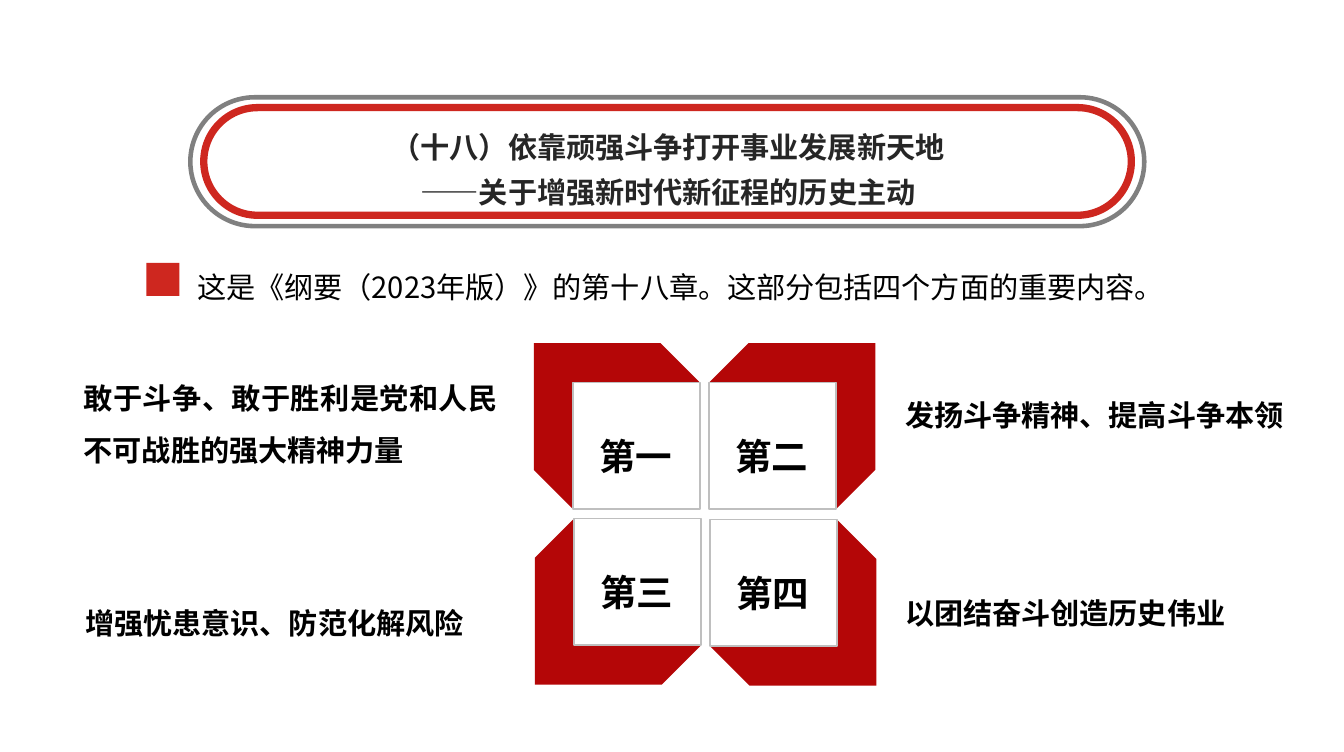
"""Builds the chapter eighteen slide with four numbered points."""
from dataclasses import dataclass

from lxml.etree import SubElement
from pptx import Presentation
from pptx.dml.color import RGBColor as Rgb
from pptx.enum.shapes import MSO_SHAPE as Kind
from pptx.enum.text import MSO_ANCHOR as Anchor, MSO_AUTO_SIZE as Fit, PP_ALIGN as Align
from pptx.oxml.ns import qn
from pptx.util import Cm, Pt

TITLE = ["（十八）依靠顽强斗争打开事业发展新天地", "——关于增强新时代新征程的历史主动"]
INTRO = "这是《纲要（2023年版）》的第十八章。这部分包括四个方面的重要内容。"
POINTS = [
    {"num": "第一", "text": "敢于斗争、敢于胜利是党和人民不可战胜的强大精神力量",
     "at": (1.37, 6.88, 8.51, 2.16), "corner": (10.32, 6.63), "way": (1, 1)},
    {"num": "第二", "text": "发扬斗争精神、提高斗争本领",
     "at": (17.25, 7.21, 8.51, 1.12), "corner": (16.92, 6.63), "way": (-1, 1)},
    {"num": "第三", "text": "增强忧患意识、防范化解风险",
     "at": (1.4, 11.23, 8.51, 1.12), "corner": (10.34, 13.23), "way": (1, -1)},
    {"num": "第四", "text": "以团结奋斗创造历史伟业",
     "at": (17.25, 11.05, 8.51, 1.12), "corner": (16.94, 13.25), "way": (-1, -1)},
]
PILLS = [((3.68, 1.88, 18.44, 2.49), "gray", 2.5),
         ((3.94, 2.08, 17.93, 2.08), "red", 4)]
BAND, SIDE = 0.76, 2.45


@dataclass(frozen=True)
class Theme:
    """Holds the colours, font and type sizes."""
    font: str = "Noto Sans CJK SC"
    red: str = "CE271F"
    deep: str = "B40607"
    gray: str = "808080"
    edge: str = "BFBFBF"
    dark: str = "262626"
    ink: str = "000000"
    body: int = 16
    big: int = 20


LOOK = Theme()


def paint(shape, fill=None, line=None, width=1):
    """Sets the fill and line of a shape."""
    shape.shadow.inherit = False
    if fill:
        shape.fill.solid()
        shape.fill.fore_color.rgb = Rgb.from_string(fill)
    else:
        shape.fill.background()
    if line:
        shape.line.color.rgb = Rgb.from_string(line)
        shape.line.width = Pt(width)
    else:
        shape.line.fill.background()


def block(slide, kind, at, **style):
    """Adds a painted preset shape."""
    shape = slide.shapes.add_shape(kind, *map(Cm, at))
    paint(shape, **style)
    return shape


def write(frame, lines, size, color=LOOK.ink, bold=True, align=Align.JUSTIFY, space=1.5):
    """Fills a text frame with one run per paragraph."""
    frame.word_wrap = True
    frame.auto_size = Fit.SHAPE_TO_FIT_TEXT
    frame.vertical_anchor = Anchor.TOP
    for i, line in enumerate(lines):
        para = frame.add_paragraph() if i else frame.paragraphs[0]
        para.alignment, para.line_spacing = align, space
        run = para.add_run()
        run.text = line
        font = run.font
        font.size, font.bold, font.name = Pt(size), bold, LOOK.font
        font.color.rgb = Rgb.from_string(color)
        SubElement(run._r.get_or_add_rPr(), qn("a:ea"), typeface=LOOK.font)


def label(slide, at, text, size, **style):
    """Adds a text box with one paragraph."""
    box = slide.shapes.add_textbox(*map(Cm, at))
    write(box.text_frame, [text], size, **style)


def quarter(slide, point):
    """Draws one corner bracket with its square, number and text."""
    (x, y), (dx, dy) = point["corner"], point["way"]
    end = BAND + SIDE
    shape = [(0, 0), (0, SIDE), (BAND, end), (BAND, BAND), (end, BAND), (SIDE, 0)]
    dots = [(Cm(x + dx * a), Cm(y + dy * b)) for a, b in shape]
    path = slide.shapes.build_freeform(*dots[0])
    path.add_line_segments(dots[1:], close=True)
    paint(path.convert_to_shape(), fill=LOOK.deep)
    left, top = (c + (BAND if d > 0 else -end) for c, d in ((x, dx), (y, dy)))
    block(slide, Kind.RECTANGLE, (left, top, SIDE, SIDE), line=LOOK.edge)
    label(slide, (left + 0.25, top + 0.45, 2.59, 1.35), point["num"], LOOK.big)
    label(slide, point["at"], point["text"], LOOK.body)


def main():
    """Builds and saves the slide."""
    deck = Presentation()
    deck.slide_width, deck.slide_height = Cm(25.98), Cm(14.53)
    slide = deck.slides.add_slide(deck.slide_layouts[5])
    for at, tone, width in PILLS:
        pill = block(slide, Kind.ROUNDED_RECTANGLE, at, line=getattr(LOOK, tone), width=width)
        pill.adjustments[0] = 0.5
    title = slide.shapes.title
    title.left, title.top, title.width, title.height = map(Cm, (4.32, 2.16, 17.2, 1.9))
    write(title.text_frame, TITLE, LOOK.body, color=LOOK.dark, align=Align.CENTER, space=1.3)
    block(slide, Kind.RECTANGLE, (2.83, 5.08, 0.64, 0.64), fill=LOOK.red)
    label(slide, (3.56, 4.75, 20.07, 1.12), INTRO, LOOK.body, bold=False)
    for point in POINTS:
        quarter(slide, point)
    deck.save("out.pptx")


if __name__ == "__main__":
    main()
